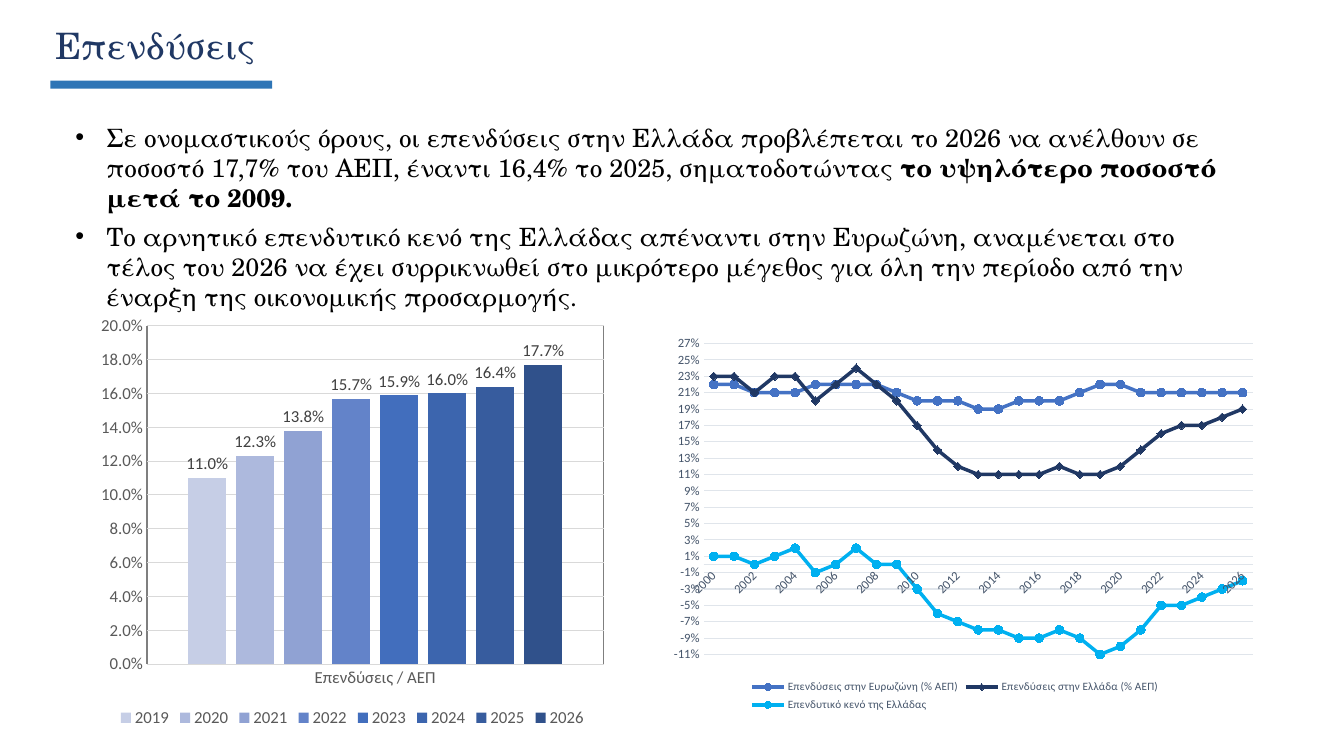
from dataclasses import dataclass
from lxml import etree
from pptx import Presentation
from pptx import util as u
from pptx.chart import data as chart_data
from pptx.dml import color as dml
from pptx.enum import chart as ec
from pptx.enum import shapes, text
from pptx.oxml import ns


@dataclass(frozen=True)
class Theme:
    serif: str = "TeX Gyre Schola"
    sans: str = "Calibri"
    navy: str = "203864"
    rule: str = "2E75B6"
    black: str = "000000"
    label: str = "404040"
    bar_text: str = "595959"
    bar_grid: str = "D9D9D9"
    bar_edge: str = "7F7F7F"
    line_text: str = "44546A"
    line_grid: str = "E0E5EB"
    title_size: int = 26
    body_size: int = 18
    bar_size: int = 12
    line_size: int = 9
    legend_size: int = 8


THEME = Theme()

BULLETS = [
    [("Σε ονομαστικούς όρους, οι επενδύσεις στην Ελλάδα προβλέπεται το 2026 να ανέλθουν σε "
      "ποσοστό 17,7% του ΑΕΠ, έναντι 16,4% το 2025, σηματοδοτώντας ", False),
     ("το υψηλότερο ποσοστό μετά το 2009.", True)],
    [("Το αρνητικό επενδυτικό κενό της Ελλάδας απέναντι στην Ευρωζώνη, αναμένεται στο "
      "τέλος του 2026 να έχει συρρικνωθεί στο μικρότερο μέγεθος για όλη την περίοδο από την "
      "έναρξη της οικονομικής προσαρμογής.", False)],
]

SHARE_OF_GDP = [
    (0.11, "C6CEE6"), (0.123, "ADB9DD"), (0.138, "90A2D3"), (0.157, "6383C9"),
    (0.159, "426EBD"), (0.16, "3C65AE"), (0.164, "375C9E"), (0.177, "30518B"),
]

CIRCLE, DIAMOND = ec.XL_MARKER_STYLE.CIRCLE, ec.XL_MARKER_STYLE.DIAMOND
PERCENT_LINES = [
    ("Επενδύσεις στην Ευρωζώνη (% ΑΕΠ)", "4472C4", "2F69D1", CIRCLE,
     [22, 22, 21, 21, 21, 22, 22, 22, 22, 21, 20, 20, 20, 19, 19, 20, 20, 20,
      21, 22, 22, 21, 21, 21, 21, 21, 21]),
    ("Επενδύσεις στην Ελλάδα (% ΑΕΠ)", "203864", "203864", DIAMOND,
     [23, 23, 21, 23, 23, 20, 22, 24, 22, 20, 17, 14, 12, 11, 11, 11, 11, 12,
      11, 11, 12, 14, 16, 17, 17, 18, 19]),
    ("Επενδυτικό κενό της Ελλάδας", "00B0F0", "00B0F0", CIRCLE,
     [1, 1, 0, 1, 2, -1, 0, 2, 0, 0, -3, -6, -7, -8, -8, -9, -9, -8,
      -9, -11, -10, -8, -5, -5, -4, -3, -2]),
]


def inches(box):
    return [u.Inches(length) for length in box]


def set_font(font, name, size, color):
    font.name = name
    font.size = u.Pt(size)
    font.color.rgb = dml.RGBColor.from_string(color)


def paint(fill, color):
    fill.solid()
    fill.fore_color.rgb = dml.RGBColor.from_string(color)


def set_line(line, color, width):
    paint(line.fill, color)
    line.width = u.Pt(width)


def add_title(slide, box):
    left, top, width, height = box
    title = slide.shapes.title
    title.left, title.top, title.width, title.height = inches(box)
    frame = title.text_frame
    frame.text = "Επενδύσεις"
    frame.vertical_anchor = text.MSO_ANCHOR.MIDDLE
    frame.auto_size = text.MSO_AUTO_SIZE.NONE
    para = frame.paragraphs[0]
    para.alignment = text.PP_ALIGN.LEFT
    set_font(para.font, THEME.serif, THEME.title_size, THEME.navy)
    rule_box = inches((left + 0.05, top + height + 0.08, 2.2, 0.08))
    rule = slide.shapes.add_shape(shapes.MSO_SHAPE.RECTANGLE, *rule_box)
    rule.shadow.inherit = False
    paint(rule.fill, THEME.rule)
    rule.line.fill.background()


def add_bullets(slide, box):
    frame = slide.shapes.add_textbox(*inches(box)).text_frame
    frame.word_wrap = True
    for index, spans in enumerate(BULLETS):
        para = frame.add_paragraph() if index else frame.paragraphs[0]
        set_font(para.font, THEME.serif, THEME.body_size, THEME.black)
        para.space_after = u.Pt(0 if index else 6)
        for words, bold in spans:
            span = para.add_run()
            span.text = words
            span.font.bold = bold
        indent = u.Inches(0.31)
        properties = para._p.get_or_add_pPr()
        properties.set("marL", str(indent))
        properties.set("indent", str(-indent))
        bullet_font = etree.SubElement(properties, ns.qn("a:buFont"), typeface="Arial")
        bullet_font.addnext(properties.makeelement(ns.qn("a:buChar"), {"char": "•"}))
        properties.append(properties.find(ns.qn("a:defRPr")))


def add_styled_chart(slide, box, kind, data, number_format, size, legend_size, color, grid):
    chart = slide.shapes.add_chart(kind, *inches(box), data).chart
    set_font(chart.font, THEME.sans, 10, THEME.black)
    chart.has_title = False
    chart.has_legend = True
    chart.legend.position = ec.XL_LEGEND_POSITION.BOTTOM
    chart.legend.include_in_layout = False
    set_font(chart.legend.font, THEME.sans, legend_size, color)
    chart.plots[0].vary_by_categories = False
    for axis in (chart.category_axis, chart.value_axis):
        axis.major_tick_mark = axis.minor_tick_mark = ec.XL_TICK_MARK.NONE
        set_font(axis.tick_labels.font, THEME.sans, size, color)
    set_line(chart.category_axis.format.line, grid, 0.75)
    chart.value_axis.format.line.fill.background()
    set_line(chart.value_axis.major_gridlines.format.line, grid, 0.75)
    chart.value_axis.tick_labels.number_format = number_format
    chart.value_axis.tick_labels.number_format_is_linked = False
    return chart


def add_share_columns(slide, box):
    data = chart_data.CategoryChartData(number_format="0.0%")
    data.categories = ["Επενδύσεις / ΑΕΠ"]
    for year, (share, _) in enumerate(SHARE_OF_GDP, 2019):
        data.add_series(str(year), [share])
    chart = add_styled_chart(slide, box, ec.XL_CHART_TYPE.COLUMN_CLUSTERED, data, "0.0%",
                             THEME.bar_size, THEME.bar_size, THEME.bar_text, THEME.bar_grid)
    set_line(chart.category_axis.major_gridlines.format.line, THEME.bar_edge, 0.75)
    plot = chart.plots[0]
    plot.gap_width, plot.overlap = 219, -27
    for series, (_, color) in zip(plot.series, SHARE_OF_GDP):
        paint(series.format.fill, color)
        series.invert_if_negative = False
    plot.has_data_labels = True
    labels = plot.data_labels
    labels.show_value = True
    labels.position = ec.XL_LABEL_POSITION.OUTSIDE_END
    labels.number_format = "0.0%"
    labels.number_format_is_linked = False
    set_font(labels.font, THEME.sans, THEME.bar_size, THEME.label)


def place_plot(chart, area):
    plot_area = chart._chartSpace.xpath("c:chart/c:plotArea")[0]
    for old in plot_area.findall(ns.qn("c:layout")):
        plot_area.remove(old)
    layout = plot_area.makeelement(ns.qn("c:layout"), {})
    plot_area.insert(0, layout)
    manual = etree.SubElement(layout, ns.qn("c:manualLayout"))
    settings = [("layoutTarget", "inner"), ("xMode", "edge"), ("yMode", "edge")]
    for name, value in settings + list(zip("xywh", area)):
        etree.SubElement(manual, ns.qn("c:" + name), val=str(value))


def add_gap_lines(slide, box):
    data = chart_data.CategoryChartData(number_format="0%")
    data.categories = [str(year) for year in range(2000, 2027)]
    for name, _, _, _, percents in PERCENT_LINES:
        data.add_series(name, [percent / 100 for percent in percents])
    chart = add_styled_chart(slide, box, ec.XL_CHART_TYPE.LINE_MARKERS, data, "0%",
                             THEME.line_size, THEME.legend_size, THEME.line_text, THEME.line_grid)
    axis = chart.value_axis
    axis.minimum_scale, axis.maximum_scale, axis.major_unit = -0.11, 0.27, 0.02
    for series, (_, color, marker_color, style, _) in zip(chart.plots[0].series, PERCENT_LINES):
        series.smooth = False
        set_line(series.format.line, color, 2.5)
        series.marker.style = style
        series.marker.size = 6
        paint(series.marker.format.fill, marker_color)
        set_line(series.marker.format.line, marker_color, 0.75)
    years = chart._chartSpace.xpath("c:chart/c:plotArea/c:catAx")[0]
    years.find(ns.qn("c:txPr")).find(ns.qn("a:bodyPr")).set("rot", "-2700000")
    skip = years.makeelement(ns.qn("c:tickLblSkip"), {"val": "2"})
    years.find(ns.qn("c:noMultiLvlLbl")).addprevious(skip)
    place_plot(chart, (0.103, 0.056, 0.866, 0.789))


def main():
    deck = Presentation()
    deck.slide_width, deck.slide_height = u.Inches(13.33), u.Inches(7.5)
    slide = deck.slides.add_slide(deck.slide_layouts.get_by_name("Title Only"))
    add_title(slide, (0.45, 0.18, 12.44, 0.54))
    add_bullets(slide, (0.65, 1.16, 11.68, 1.7))
    add_share_columns(slide, (0.9, 3.05, 5.19, 4.21))
    add_gap_lines(slide, (6.33, 3.19, 6.29, 3.91))
    deck.save("out.pptx")


if __name__ == "__main__":
    main()
